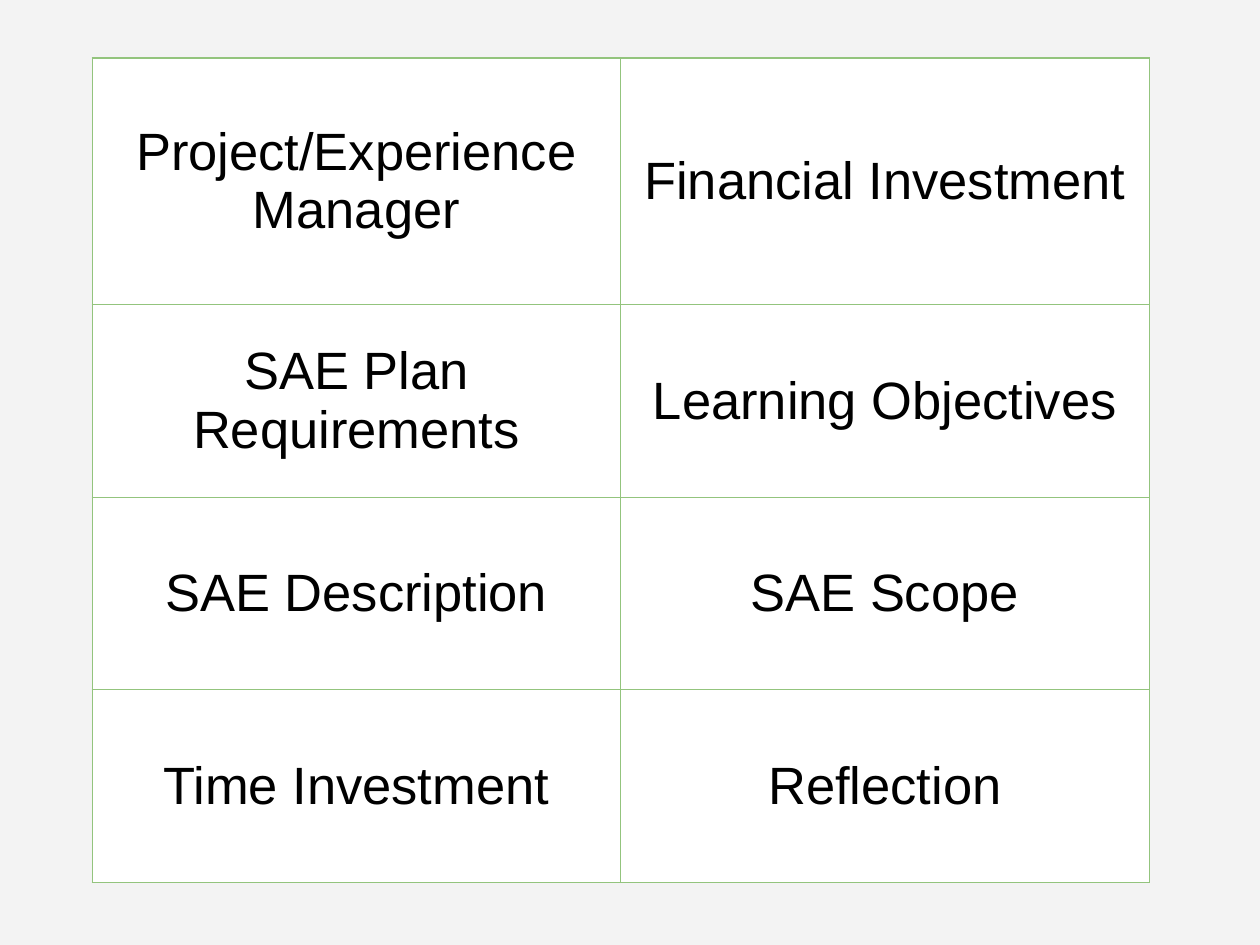
from lxml import etree
from pptx import Presentation
from pptx.dml.color import RGBColor
from pptx.enum.text import MSO_ANCHOR, PP_ALIGN
from pptx.oxml.ns import qn
from pptx.util import Pt

MIDDLE = MSO_ANCHOR.MIDDLE
CENTER = PP_ALIGN.CENTER

TOPICS = [
    ("Project/Experience Manager", "Financial Investment"),
    ("SAE Plan Requirements", "Learning Objectives"),
    ("SAE Description", "SAE Scope"),
    ("Time Investment", "Reflection"),
]
LEFT, TOP = 52.7, 33.1
COLUMN_WIDTH = 302
ROW_HEIGHTS = [141.1, 110, 110, 110]
MARGIN = 7.2
BORDER, BORDER_WIDTH = "93C47D", 0.75


def paint(fill, color):
    fill.solid()
    fill.fore_color.rgb = RGBColor.from_string(color)


def add_borders(cell):
    properties = cell._tc.get_or_add_tcPr()
    for side in ("lnL", "lnR", "lnT", "lnB"):
        line = etree.SubElement(properties, qn(f"a:{side}"), w=str(Pt(BORDER_WIDTH)))
        solid = etree.SubElement(line, qn("a:solidFill"))
        etree.SubElement(solid, qn("a:srgbClr"), val=BORDER)


def format_cell(cell, text):
    add_borders(cell)
    paint(cell.fill, "FFFFFF")
    cell.vertical_anchor = MIDDLE
    cell.margin_left = cell.margin_right = Pt(MARGIN)
    cell.margin_top = cell.margin_bottom = Pt(MARGIN)
    cell.text_frame.text = text
    para = cell.text_frame.paragraphs[0]
    para.alignment = CENTER
    font = para.runs[0].font
    font.name, font.size, font.bold = "Arial", Pt(30), False
    paint(font.fill, "000000")


deck = Presentation()
deck.slide_width, deck.slide_height = Pt(720), Pt(540)
page = deck.slides.add_slide(deck.slide_layouts[6])
paint(page.background.fill, "F3F3F3")

columns = len(TOPICS[0])
table = page.shapes.add_table(
    len(TOPICS), columns, Pt(LEFT), Pt(TOP),
    Pt(columns * COLUMN_WIDTH), Pt(sum(ROW_HEIGHTS)),
).table
table.first_row = table.horz_banding = False
for column in table.columns:
    column.width = Pt(COLUMN_WIDTH)
for row, height, topics in zip(table.rows, ROW_HEIGHTS, TOPICS):
    row.height = Pt(height)
    for cell, topic in zip(row.cells, topics):
        format_cell(cell, topic)

deck.save("out.pptx")
